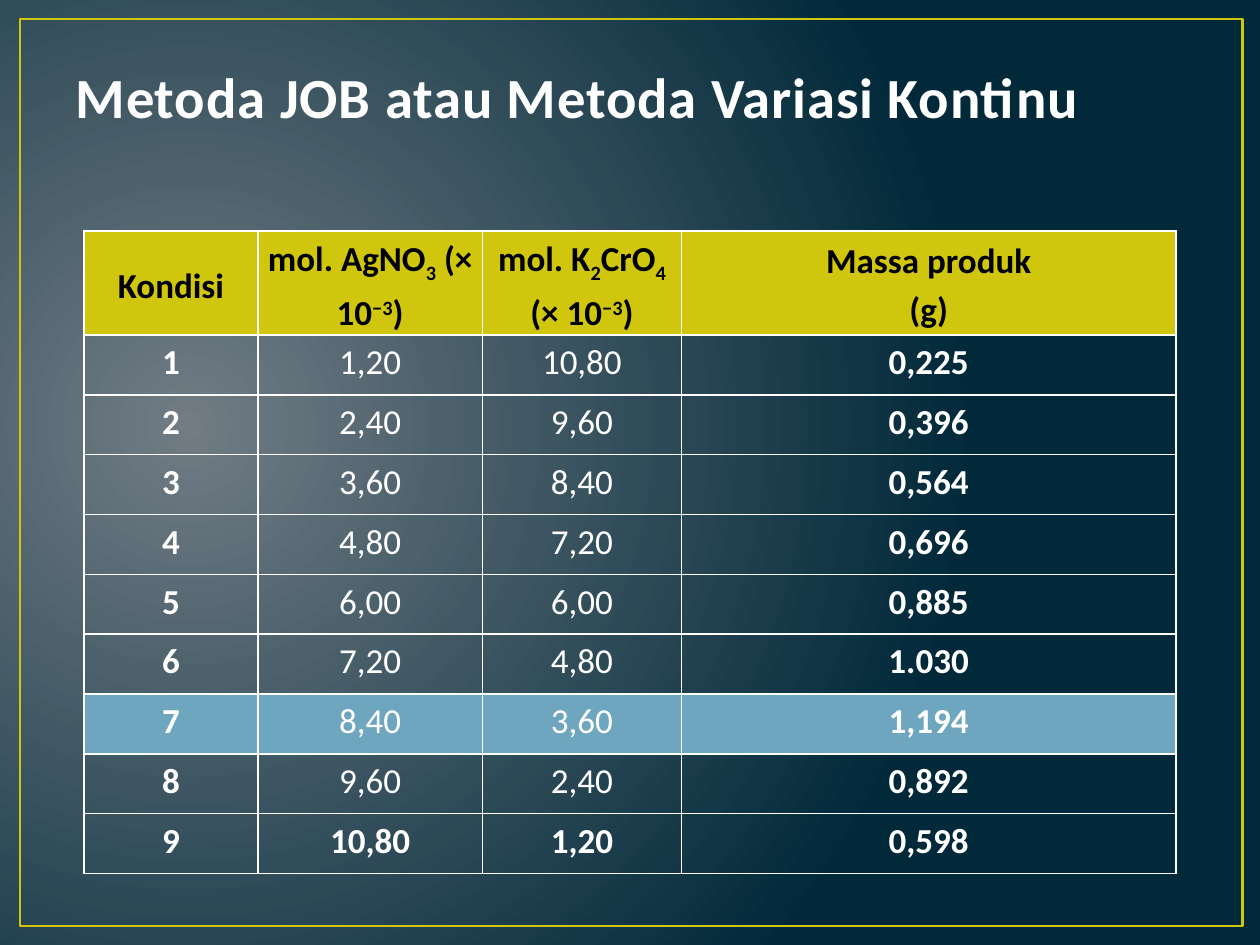
from lxml import etree
from pptx import Presentation
from pptx.dml.color import RGBColor
from pptx.enum import shapes, text
from pptx.oxml import ns
from pptx.util import Pt

COLORS = {
    "glow": "717C84", "night": "01293A", "accent": "CFC60D",
    "highlight": "6FA6BF", "title": "FEFEFE", "outline": "384F55",
    "white": "FFFFFF", "black": "000000",
}
FONT = "Calibri"
SUB, SUP = -25000, 30000

# Each heading is a list of paragraphs, each a list of (text, baseline)
HEADINGS = [
    [[("Kondisi", 0)]],
    [[("mol. AgNO", 0), ("3", SUB), (" (× 10", 0), ("−3", SUP), (")", 0)]],
    [[("mol. K", 0), ("2", SUB), ("CrO", 0), ("4", SUB), (" (× 10", 0),
      ("−3", SUP), (")", 0)]],
    [[("Massa produk", 0)], [("(g)", 0)]],
]
MEASUREMENTS = [
    ("1", "1,20", "10,80", "0,225"),
    ("2", "2,40", "9,60", "0,396"),
    ("3", "3,60", "8,40", "0,564"),
    ("4", "4,80", "7,20", "0,696"),
    ("5", "6,00", "6,00", "0,885"),
    ("6", "7,20", "4,80", "1.030"),
    ("7", "8,40", "3,60", "1,194"),
    ("8", "9,60", "2,40", "0,892"),
    ("9", "10,80", "1,20", "0,598"),
]
PEAK, LAST = "7", "9"
COLUMN_SHARES = (1.38, 1.78, 1.58, 3.92)
HEADER_HEIGHT, ROW_HEIGHT = 59.4, 34.2


def rgb(name):
    return RGBColor.from_string(COLORS[name])


def add_line(parent, tag, color, width):
    line = etree.SubElement(parent, ns.qn(tag), w=str(int(Pt(width))))
    fill = etree.SubElement(line, ns.qn("a:solidFill"))
    etree.SubElement(fill, ns.qn("a:srgbClr"), val=COLORS[color])
    return line


def style_run(run, size, color, bold):
    run.font.name = FONT
    run.font.size = Pt(size)
    run.font.bold = bold
    run.font.color.rgb = rgb(color)


def paint_background(slide):
    fill = slide.background.fill
    fill.gradient()
    for stop, (position, color) in zip(fill.gradient_stops,
                                       ((0, "glow"), (1, "night"))):
        stop.position = position
        stop.color.rgb = rgb(color)
    # Turn the linear gradient into a circular one
    gradient = slide.background._cSld.find(".//" + ns.qn("a:gradFill"))
    linear = gradient.find(ns.qn("a:lin"))
    circle = etree.Element(ns.qn("a:path"), {"path": "circle"})
    etree.SubElement(circle, ns.qn("a:fillToRect"),
                     l="15000", t="50000", r="85000", b="60000")
    gradient.replace(linear, circle)


def add_frame(slide, left, top, width, height):
    frame = slide.shapes.add_shape(shapes.MSO_SHAPE.RECTANGLE, Pt(left),
                                   Pt(top), Pt(width), Pt(height))
    frame.shadow.inherit = False
    frame.fill.background()
    frame.line.color.rgb = rgb("accent")
    frame.line.width = Pt(1.5)


def place_title(slide, left, top, width, height):
    title = slide.shapes.title
    title.left, title.top = Pt(left), Pt(top)
    title.width, title.height = Pt(width), Pt(height)
    frame = title.text_frame
    frame.text = "Metoda JOB atau Metoda Variasi Kontinu"
    frame.word_wrap = True
    frame.auto_size = text.MSO_AUTO_SIZE.NONE
    frame.vertical_anchor = text.MSO_ANCHOR.BOTTOM
    paragraph = frame.paragraphs[0]
    paragraph.alignment = text.PP_ALIGN.LEFT
    run = paragraph.runs[0]
    style_run(run, 32.4, "title", True)
    properties = run.font._element
    properties.set("spc", "50")
    properties.insert(0, add_line(properties, "a:ln", "outline", 1.05))


def format_cell(cell, fill, color, bold):
    cell.margin_left = cell.margin_right = Pt(5)
    cell.margin_top = cell.margin_bottom = 0
    for edge in ("a:lnL", "a:lnR", "a:lnT", "a:lnB"):
        add_line(cell._tc.get_or_add_tcPr(), edge, "white", 1)
    if fill:
        cell.fill.solid()
        cell.fill.fore_color.rgb = rgb(fill)
    else:
        cell.fill.background()
    for paragraph in cell.text_frame.paragraphs:
        paragraph.alignment = text.PP_ALIGN.CENTER
        paragraph.line_spacing = 1.15
        for run in paragraph.runs:
            style_run(run, 20, color, bold)


def write_heading(cell, paragraphs):
    frame = cell.text_frame
    for index, parts in enumerate(paragraphs):
        paragraph = frame.add_paragraph() if index else frame.paragraphs[0]
        for words, baseline in parts:
            run = paragraph.add_run()
            run.text = words
            if baseline:
                run.font._element.set("baseline", str(baseline))
    cell.vertical_anchor = text.MSO_ANCHOR.MIDDLE
    format_cell(cell, "accent", "black", True)


def add_measurements(slide, left, top, width):
    height = HEADER_HEIGHT + ROW_HEIGHT * len(MEASUREMENTS)
    table = slide.shapes.add_table(len(MEASUREMENTS) + 1, len(HEADINGS),
                                   Pt(left), Pt(top), Pt(width),
                                   Pt(height)).table
    table.horz_banding = False
    for column, share in zip(table.columns, COLUMN_SHARES):
        column.width = Pt(width * share / sum(COLUMN_SHARES))
    for index, row in enumerate(table.rows):
        row.height = Pt(ROW_HEIGHT if index else HEADER_HEIGHT)

    for column, heading in enumerate(HEADINGS):
        write_heading(table.cell(0, column), heading)
    for row, values in enumerate(MEASUREMENTS, start=1):
        condition = values[0]
        for column, value in enumerate(values):
            cell = table.cell(row, column)
            cell.text_frame.text = value
            bold = column in (0, 3) or condition == LAST
            fill = "highlight" if condition == PEAK else None
            format_cell(cell, fill, "white", bold)


def main():
    deck = Presentation()
    deck.slide_width, deck.slide_height = Pt(720), Pt(540)
    slide = deck.slides.add_slide(deck.slide_layouts[5])  # title only
    paint_background(slide)
    add_frame(slide, 11.5, 10.8, 698.4, 518.4)
    place_title(slide, 36, 21.6, 648, 56.2)
    add_measurements(slide, 48, 132, 624)
    deck.save("out.pptx")


if __name__ == "__main__":
    main()
